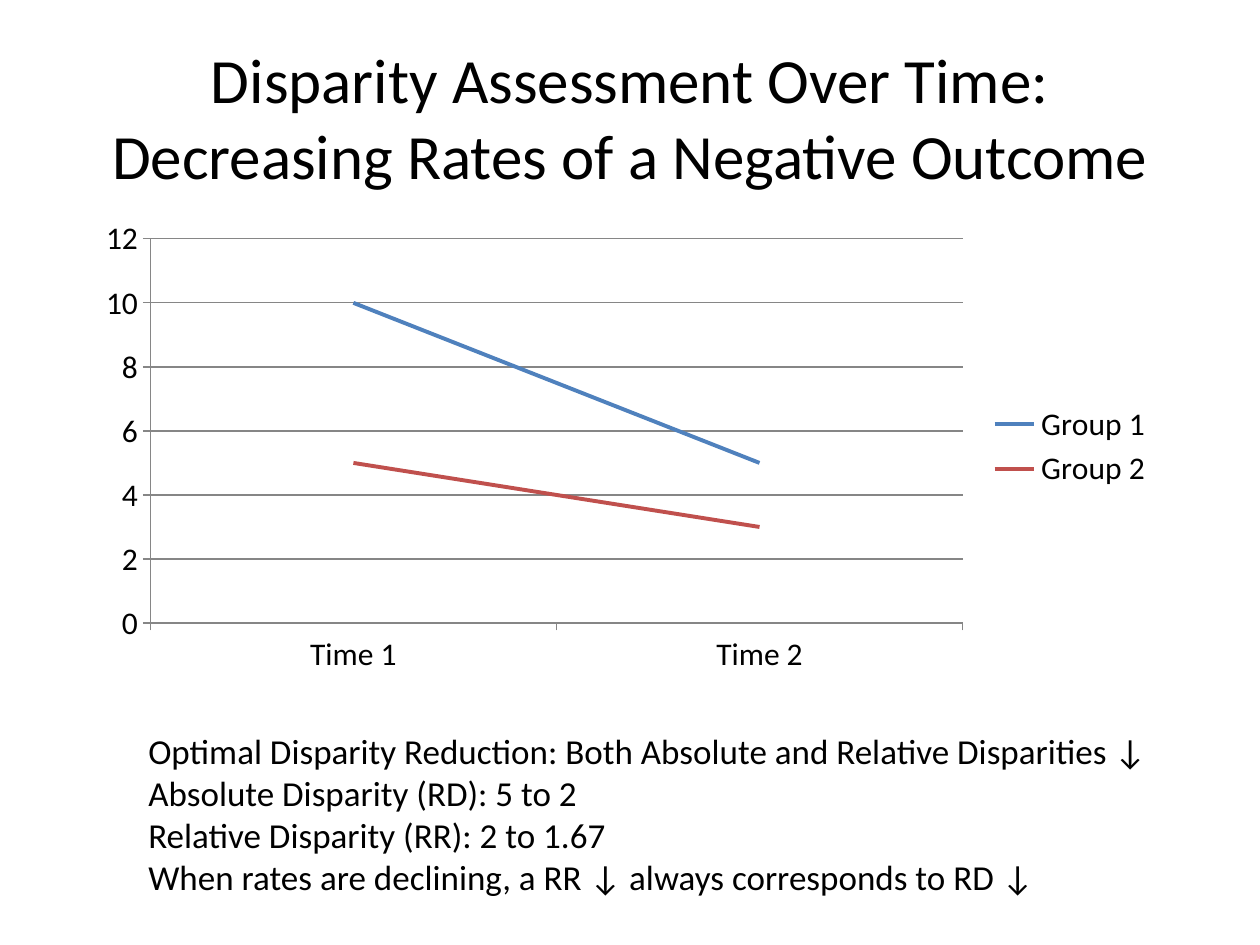
import pptx
import pptx.chart.data
import pptx.dml.color
import pptx.enum.chart
import pptx.enum.text
import pptx.util
from pptx.util import Cm

BLACK = "000000"
GREY = "868686"
TITLE_LINES = [
    "Disparity Assessment Over Time:",
    "Decreasing Rates of a Negative Outcome",
]
TIMES = ["Time 1", "Time 2"]
GROUPS = [("Group 1", (10, 5), "4F81BD"), ("Group 2", (5, 3), "C0504D")]
FINDINGS = [
    "Optimal Disparity Reduction: Both Absolute and Relative Disparities ↓",
    "Absolute Disparity (RD): 5 to 2",
    "Relative Disparity (RR): 2 to 1.67",
    "When rates are declining, a RR ↓ always corresponds to RD ↓",
]


def rgb(value):
    return pptx.dml.color.RGBColor.from_string(value)


class SlideBuilder:
    font_name = "Calibri"
    title_size = 36
    chart_size = 18
    body_size = 20

    def __init__(self, slide):
        self.s = slide

    def style_font(self, font, size):
        font.name = self.font_name
        font.size = pptx.util.Pt(size)
        font.color.rgb = rgb(BLACK)

    def style_line(self, line, color, width):
        line.color.rgb = rgb(color)
        line.width = pptx.util.Pt(width)

    def add_run(self, p, text, size):
        r = p.add_run()
        r.text = text
        self.style_font(r.font, size)

    def title(self, lines, left, top, width, height):
        sp = self.s.shapes.title
        sp.left, sp.top, sp.width, sp.height = left, top, width, height
        tf = sp.text_frame
        tf.vertical_anchor = pptx.enum.text.MSO_ANCHOR.MIDDLE
        p = tf.paragraphs[0]
        p.alignment = pptx.enum.text.PP_ALIGN.CENTER
        for i, text in enumerate(lines):
            if i:
                p.add_line_break()
            self.add_run(p, text, self.title_size)

    def line_chart(self, categories, series, left, top, width, height):
        data = pptx.chart.data.CategoryChartData()
        data.categories = categories
        for name, values, _ in series:
            data.add_series(name, values)
        chart = self.s.shapes.add_chart(
            pptx.enum.chart.XL_CHART_TYPE.LINE, left, top, width, height, data
        ).chart
        self.style_font(chart.font, self.chart_size)
        chart.has_title = False
        chart.has_legend = True
        chart.legend.position = pptx.enum.chart.XL_LEGEND_POSITION.RIGHT
        chart.legend.include_in_layout = False
        chart.plots[0].vary_by_categories = False
        for plotted, (_, _, color) in zip(chart.plots[0].series, series):
            plotted.smooth = False
            plotted.marker.style = pptx.enum.chart.XL_MARKER_STYLE.NONE
            self.style_line(plotted.format.line, color, 2.25)
        for axis in (chart.category_axis, chart.value_axis):
            axis.major_tick_mark = pptx.enum.chart.XL_TICK_MARK.OUTSIDE
            axis.minor_tick_mark = pptx.enum.chart.XL_TICK_MARK.NONE
            self.style_line(axis.format.line, GREY, 0.75)
        chart.value_axis.minimum_scale = 0
        chart.value_axis.maximum_scale = 12
        chart.value_axis.major_unit = 2
        chart.value_axis.has_major_gridlines = True
        self.style_line(chart.value_axis.major_gridlines.format.line, GREY, 0.75)

    def text_box(self, paragraphs, left, top, width, height):
        tf = self.s.shapes.add_textbox(left, top, width, height).text_frame
        tf.word_wrap = True
        tf.auto_size = pptx.enum.text.MSO_AUTO_SIZE.SHAPE_TO_FIT_TEXT
        for i, text in enumerate(paragraphs):
            p = tf.add_paragraph() if i else tf.paragraphs[0]
            self.add_run(p, text, self.body_size)


def main():
    prs = pptx.Presentation()
    prs.slide_width, prs.slide_height = Cm(25.4), Cm(19.05)
    title_only = prs.slide_layouts.get_by_name("Title Only")
    builder = SlideBuilder(prs.slides.add_slide(title_only))
    builder.title(TITLE_LINES, Cm(1.27), Cm(0.76), Cm(22.86), Cm(3.18))
    builder.line_chart(TIMES, GROUPS, Cm(1.7), Cm(4.24), Cm(21.8), Cm(9.53))
    builder.text_box(FINDINGS, Cm(2.74), Cm(14.58), Cm(21.59), Cm(3.68))
    prs.save("out.pptx")


if __name__ == "__main__":
    main()
